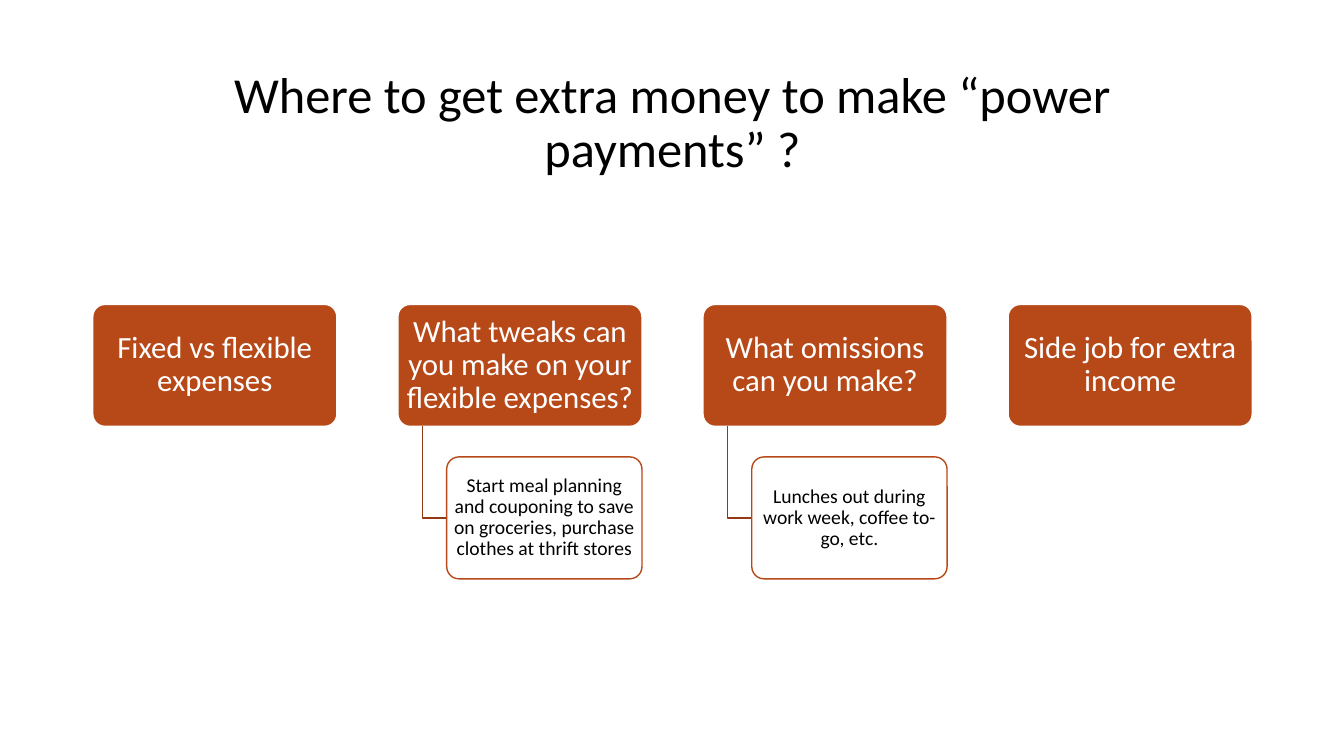
from lxml import etree
from pptx import Presentation
from pptx.dml.color import RGBColor
from pptx.enum.shapes import MSO_SHAPE
from pptx.enum.text import MSO_ANCHOR, MSO_AUTO_SIZE, PP_ALIGN
from pptx.oxml.ns import qn
from pptx.util import Inches, Pt

ROUNDED = MSO_SHAPE.ROUNDED_RECTANGLE
MIDDLE, CENTER = MSO_ANCHOR.MIDDLE, PP_ALIGN.CENTER
NO_AUTOFIT = MSO_AUTO_SIZE.NONE

TITLE = "Where to get extra money to make “power payments” ?"
BRANCHES = [
    ("Fixed vs flexible expenses", None),
    ("What tweaks can you make on your flexible expenses?",
     "Start meal planning and couponing to save on groceries, "
     "purchase clothes at thrift stores"),
    ("What omissions can you make?",
     "Lunches out during work week, coffee to-go, etc."),
    ("Side job for extra income", None),
]

COLORS = {"rust": "B74919", "dark rust": "933A14", "white": "FFFFFF", "black": "000000"}
FONT = "Calibri"
HEADING = {"fill": "rust", "line": "white", "text": "white", "size": 22, "insets": (0.05, 0.03)}
DETAIL = {"fill": "white", "line": "rust", "text": "black", "size": 14, "insets": (0.03, 0.02),
          "opacity": 90}

SLIDE_WIDTH, SLIDE_HEIGHT = 13.33, 7.5
MARGIN = 0.92
CONTENT_WIDTH = 11.5
TITLE_TOP, TITLE_HEIGHT = 0.61, 1.24
BOX_TOP = 3.02
BOX_HEIGHT = 1.21
GAP_RATIO = 0.25  # gap between columns, as a share of a column
COLUMN_WIDTH = CONTENT_WIDTH / (len(BRANCHES) + (len(BRANCHES) - 1) * GAP_RATIO)
COLUMN_PITCH = COLUMN_WIDTH * (1 + GAP_RATIO)
INDENT = COLUMN_WIDTH / 10  # the stem hangs one indent in, the detail box two
DETAIL_TOP = BOX_TOP + BOX_HEIGHT * 1.25
DETAIL_WIDTH = COLUMN_WIDTH * 0.8


def color(name):
    return RGBColor.from_string(COLORS[name])


def write_text(shape, text, size, text_color, insets):
    frame = shape.text_frame
    horizontal, vertical = (Inches(inset) for inset in insets)
    frame_format = {
        "word_wrap": True, "auto_size": NO_AUTOFIT, "vertical_anchor": MIDDLE,
        "margin_left": horizontal, "margin_right": horizontal,
        "margin_top": vertical, "margin_bottom": vertical,
    }
    for attribute, value in frame_format.items():
        setattr(frame, attribute, value)
    frame.text = text
    paragraph = frame.paragraphs[0]
    paragraph.alignment = CENTER
    paragraph.line_spacing = 0.9
    font = paragraph.runs[0].font
    for attribute, value in {"name": FONT, "size": Pt(size), "bold": False}.items():
        setattr(font, attribute, value)
    font.color.rgb = color(text_color)


def set_outline(shape, line_color):
    shape.shadow.inherit = False
    shape.line.color.rgb = color(line_color)
    shape.line.width = Pt(1)


def add_box(slide, left, top, width, text, style):
    box = slide.shapes.add_shape(
        ROUNDED, Inches(left), Inches(top), Inches(width), Inches(BOX_HEIGHT))
    box.adjustments[0] = 0.1
    box.fill.solid()
    box.fill.fore_color.rgb = color(style["fill"])
    if "opacity" in style:
        fill_color = box.fill._xPr.find(qn("a:solidFill"))[0]
        etree.SubElement(fill_color, qn("a:alpha"), val=str(style["opacity"] * 1000))
    set_outline(box, style["line"])
    write_text(box, text, style["size"], style["text"], style["insets"])


def add_elbow(slide, left, top, right, bottom):
    builder = slide.shapes.build_freeform(Inches(left), Inches(top))
    corners = [(left, bottom), (right, bottom)]
    builder.add_line_segments([(Inches(x), Inches(y)) for x, y in corners], close=False)
    elbow = builder.convert_to_shape()
    elbow.fill.background()
    set_outline(elbow, "dark rust")


def main():
    presentation = Presentation()
    presentation.slide_width = Inches(SLIDE_WIDTH)
    presentation.slide_height = Inches(SLIDE_HEIGHT)
    slide = presentation.slides.add_slide(presentation.slide_layouts[5])

    title = slide.shapes.title
    title.left, title.top = Inches(MARGIN), Inches(TITLE_TOP)
    title.width, title.height = Inches(CONTENT_WIDTH), Inches(TITLE_HEIGHT)
    write_text(title, TITLE, 36, "black", (0.1, 0.05))

    for column, (heading, detail) in enumerate(BRANCHES):
        left = MARGIN + column * COLUMN_PITCH
        add_box(slide, left, BOX_TOP, COLUMN_WIDTH, heading, HEADING)
        if detail:
            detail_left = left + 2 * INDENT
            add_elbow(slide, left + INDENT, BOX_TOP + BOX_HEIGHT,
                      detail_left, DETAIL_TOP + BOX_HEIGHT / 2)
            add_box(slide, detail_left, DETAIL_TOP, DETAIL_WIDTH, detail, DETAIL)

    presentation.save("out.pptx")


if __name__ == "__main__":
    main()
